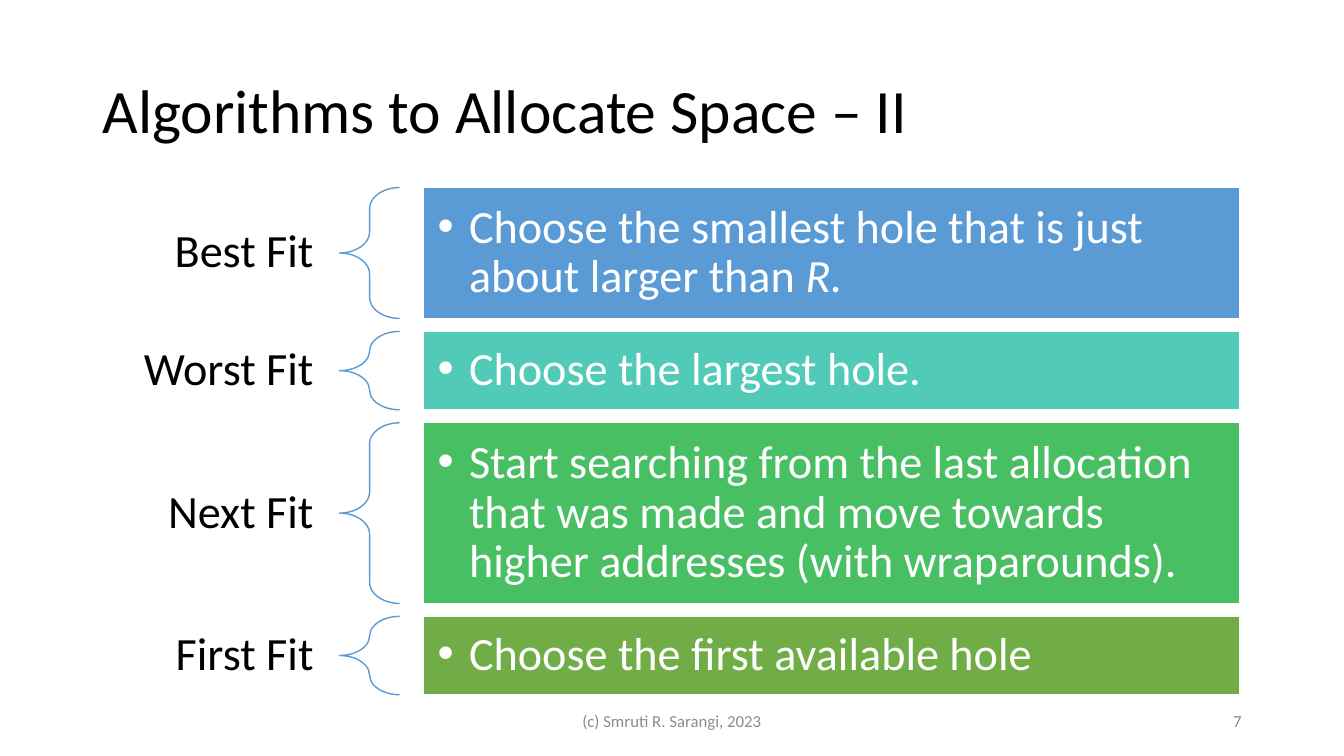
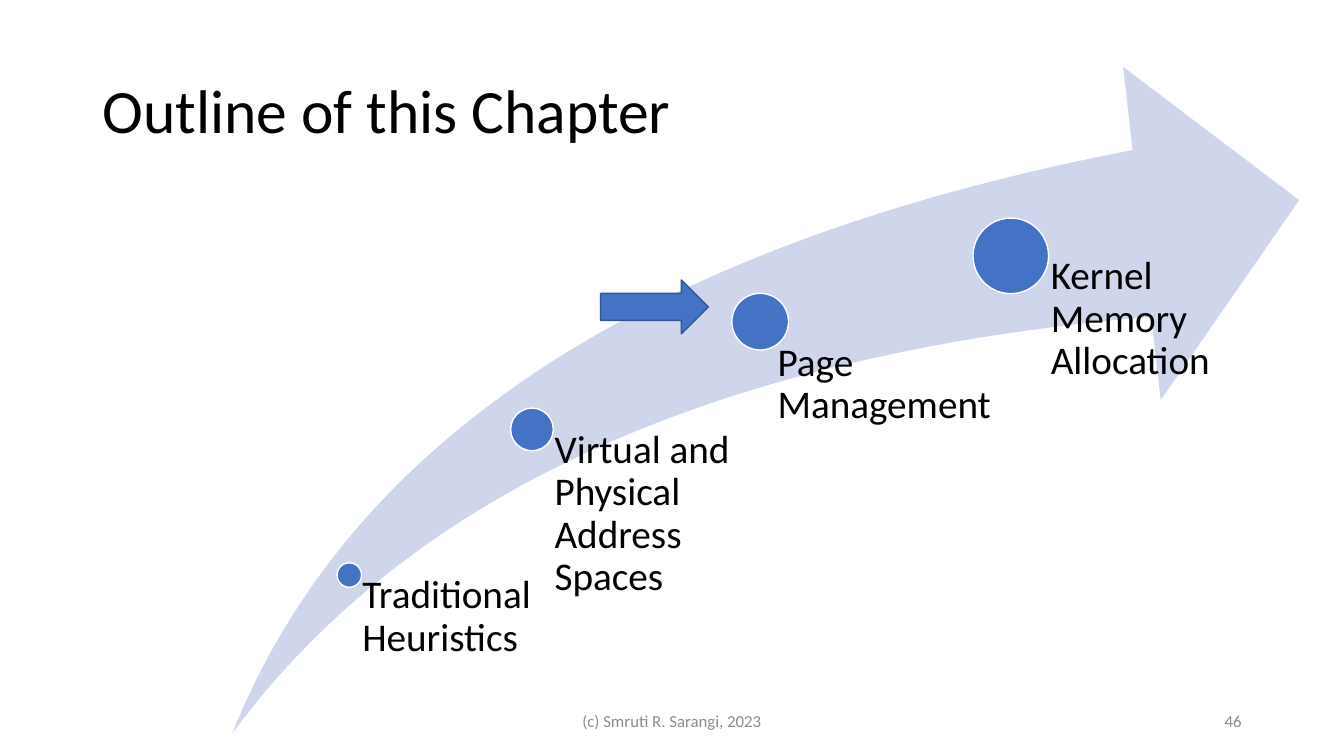
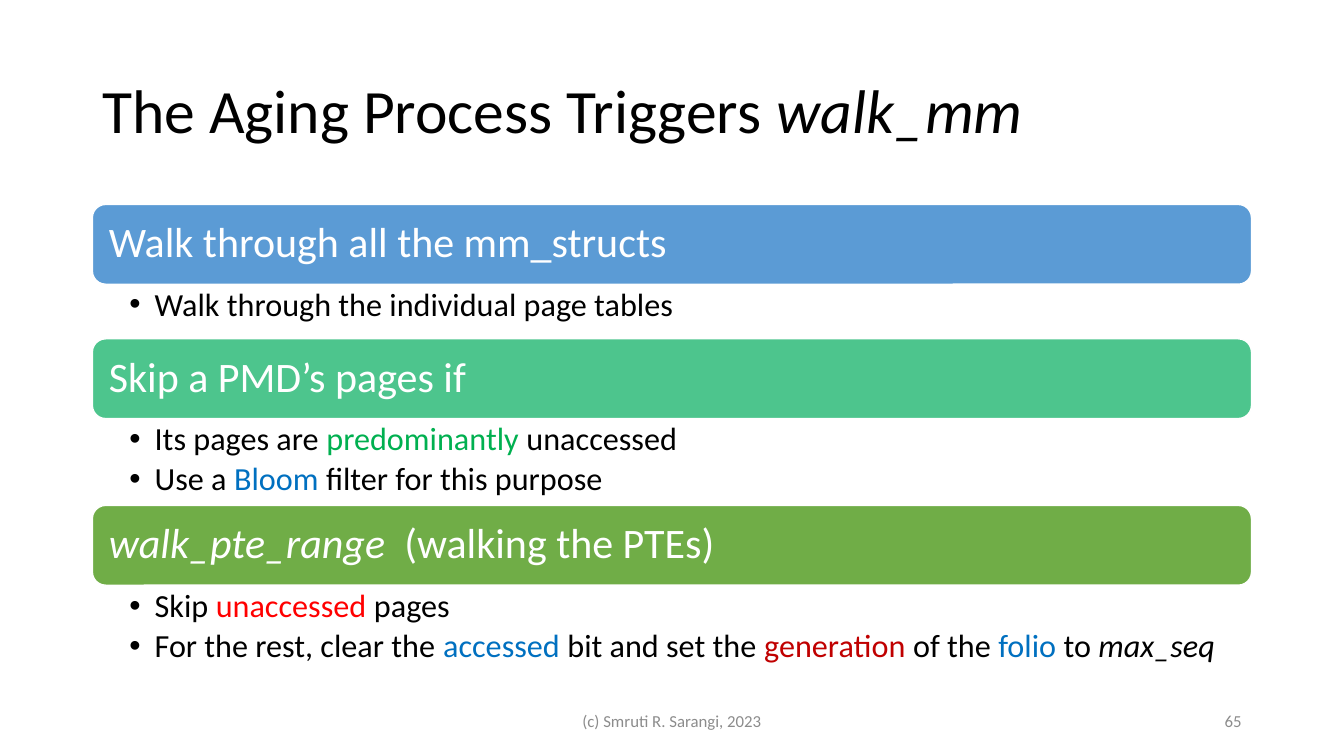
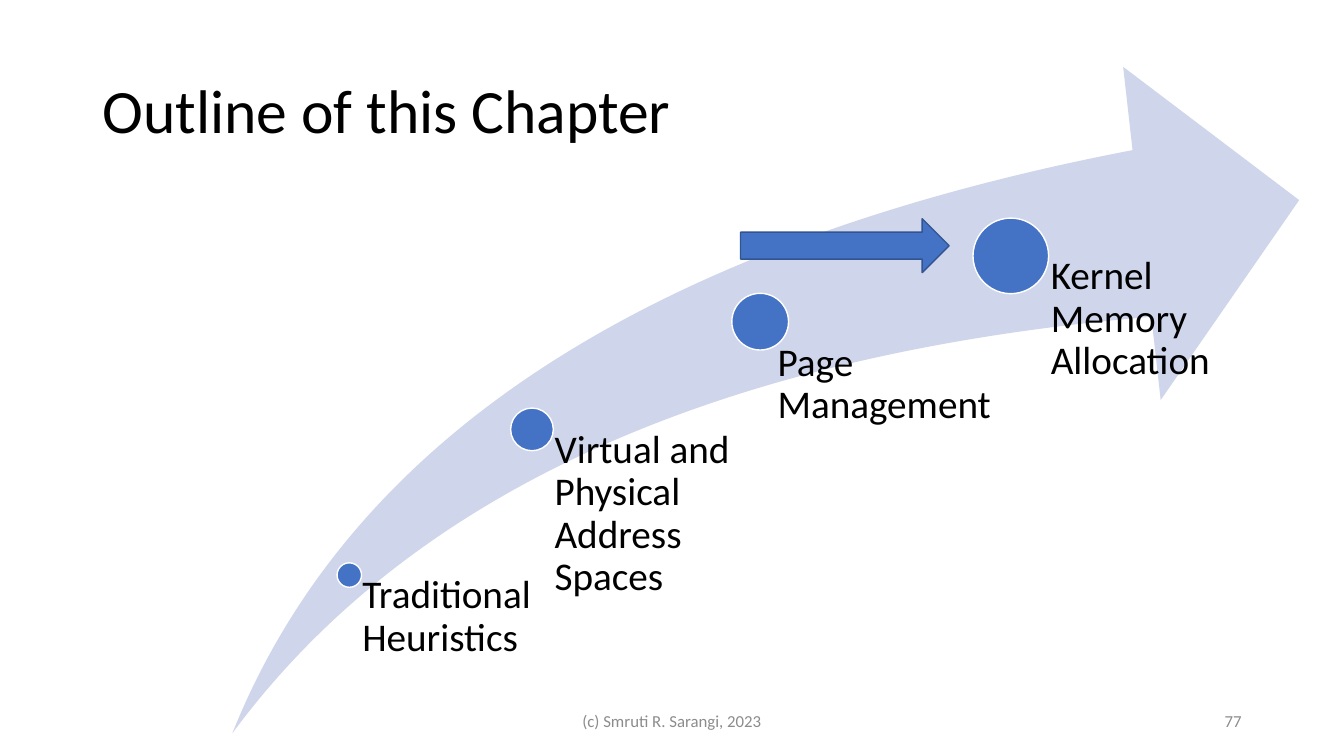
from lxml.etree import SubElement
from pptx import Presentation
from pptx.dml.color import RGBColor
from pptx.enum.shapes import MSO_SHAPE
from pptx.enum.text import MSO_ANCHOR, MSO_AUTO_SIZE, PP_ALIGN
from pptx.oxml.ns import qn
from pptx.util import Pt

FONT = "Calibri"
BLACK = RGBColor(0x00, 0x00, 0x00)
WHITE = RGBColor(0xFF, 0xFF, 0xFF)
GREY = RGBColor(0x8C, 0x8C, 0x8C)
SKY = RGBColor(0x5B, 0x9B, 0xD5)
TEAL = RGBColor(0x52, 0xCA, 0xB8)
MINT = RGBColor(0x4D, 0xC5, 0x8D)
GREEN = RGBColor(0x49, 0xBF, 0x64)
OLIVE = RGBColor(0x70, 0xAD, 0x47)
PALE = RGBColor(0xCF, 0xD5, 0xEA)
BLUE = RGBColor(0x44, 0x72, 0xC4)
NAVY = RGBColor(0x32, 0x54, 0x91)
LEAF = RGBColor(0x00, 0xB0, 0x50)
AZURE = RGBColor(0x00, 0x70, 0xC0)
RED = RGBColor(0xFF, 0x00, 0x00)
WINE = RGBColor(0xC0, 0x00, 0x00)
ITALIC = "italic"

FITS = [
    ("Best Fit", ["Choose the smallest hole that is just about larger than ",
                  ("R.", ITALIC)], SKY, 93.5),
    ("Worst Fit", "Choose the largest hole.", TEAL, 56),
    ("Next Fit", "Start searching from the last allocation that was made and "
                 "move towards higher addresses (with wraparounds).", GREEN, 129),
    ("First Fit", "Choose the first available hole", OLIVE, 56),
]

STOPS = [
    ("Traditional Heuristics", 83.5, 363, 17.5, 134, (0, 0)),
    ("Virtual and Physical Address Spaces", 214, 259, 30.5, 160, (0, 0)),
    ("Page \vManagement", 377, 182, 40.5, 270, (-9, 15)),
    ("Kernel Memory Allocation", 556, 135, 54, 160, (0, 0)),
]

STEPS = [
    ("Walk through all the mm_structs", SKY, 39,
     ["Walk through the individual page tables"]),
    ("Skip a PMD’s pages if", MINT, 62,
     [["Its pages are ", ("predominantly ", LEAF), "unaccessed"],
      ["Use a ", ("Bloom", AZURE), " filter for this purpose"]]),
    ([("walk_pte_range  ", ITALIC), "(walking the PTEs)"], OLIVE, 62,
     [["Skip ", ("unaccessed", RED), " pages"],
      ["For the rest, clear the ", ("accessed", AZURE), " bit and set the ",
       ("generation", WINE), " of the ", ("folio", AZURE), " to ",
       ("max_seq", ITALIC)]]),
]


def write(shape, lines, size, color, inset=(7.2, 3.6, 7.2, 3.6),
          align=PP_ALIGN.LEFT, anchor=MSO_ANCHOR.MIDDLE, hang=0, pitch=0.9, after=0):
    """Fill a shape with paragraphs, each a string or a list of styled parts."""
    frame = shape.text_frame
    frame.word_wrap = True
    frame.auto_size = MSO_AUTO_SIZE.NONE
    frame.vertical_anchor = anchor
    (frame.margin_left, frame.margin_top,
     frame.margin_right, frame.margin_bottom) = map(Pt, inset)
    for n, line in enumerate(lines):
        para = frame.add_paragraph() if n else frame.paragraphs[0]
        para.alignment, para.line_spacing = align, pitch
        para.space_before, para.space_after = Pt(0), Pt(after)
        if hang:
            add_dot(para, hang)
        font = para.font
        font.name, font.size, font.color.rgb = FONT, Pt(size), color
        if isinstance(line, str):
            para.text = line
            continue
        for part in line:
            text, style = (part, None) if isinstance(part, str) else part
            run = para.add_run()
            run.text = text
            if style == ITALIC:
                run.font.italic = True
            elif style is not None:
                run.font.color.rgb = style


def add_dot(para, hang):
    """Give a paragraph a round bullet and a hanging indent."""
    props = para._p.get_or_add_pPr()
    props.set("marL", str(Pt(hang)))
    props.set("indent", str(-Pt(hang)))
    SubElement(props, qn("a:buFont")).set("typeface", "Arial")
    SubElement(props, qn("a:buChar")).set("char", "•")


def add_box(slide, box):
    """Add an empty text box."""
    return slide.shapes.add_textbox(*map(Pt, box))


def add_form(slide, kind, box, fill=None, line=None):
    """Add a flat preset shape."""
    shape = slide.shapes.add_shape(kind, *map(Pt, box))
    shape.shadow.inherit = False
    if fill is None:
        shape.fill.background()
    else:
        shape.fill.solid()
        shape.fill.fore_color.rgb = fill
    if line is None:
        shape.line.fill.background()
    else:
        shape.line.color.rgb = line
        shape.line.width = Pt(1)
    return shape


def add_page(deck, title, number):
    """Start a slide with its title, footer and page number."""
    slide = deck.slides.add_slide(deck.slide_layouts[5])
    head = slide.shapes.title
    head.left, head.top, head.width, head.height = map(Pt, (66, 29, 828, 104))
    write(head, [title], 44, BLACK)
    write(add_box(slide, (318, 500.5, 324, 29)), ["(c) Smruti R. Sarangi, 2023"],
          12, GREY, align=PP_ALIGN.CENTER, pitch=1)
    write(add_box(slide, (678, 500.5, 216, 29)), [str(number)],
          12, GREY, align=PP_ALIGN.RIGHT, pitch=1)
    return slide


def draw_fits(slide, left, top, width):
    """Draw rows of label, brace and coloured bar."""
    label, brace, start, gap = 214.5, 43, 274.5, 9.25
    for name, text, color, high in FITS:
        write(add_box(slide, (left, top, label, high)), [name], 33, BLACK,
              (18.5, 0, 18.5, 0), PP_ALIGN.RIGHT)
        curve = add_form(slide, MSO_SHAPE.LEFT_BRACE,
                         (left + label, top, brace, high), line=SKY)
        curve.adjustments[0], curve.adjustments[1] = 0.35, 0.5
        bar = add_form(slide, MSO_SHAPE.RECTANGLE,
                       (left + start, top, width - start, high), color, WHITE)
        write(bar, [text], 33, WHITE, (10, 10, 10, 10), hang=22.5)
        top += high + gap


def draw_path(slide, left, top, width, height):
    """Draw the rising arrow with its stops and their labels."""
    swoosh = add_form(slide, MSO_SHAPE.SWOOSH_ARROW, (left, top, width, height), PALE)
    swoosh.adjustments[0], swoosh.adjustments[1] = 0.25, 0.25
    for name, across, down, size, span, (right, drop) in STOPS:
        x, y = left + across, top + down
        add_form(slide, MSO_SHAPE.OVAL, (x - size / 2, y - size / 2, size, size),
                 BLUE, WHITE)
        label = add_box(slide, (x + right, y + drop, span, height - down - drop))
        write(label, [name], 28, BLACK, (0.53 * size, 0, 0, 0),
              anchor=MSO_ANCHOR.TOP)


def draw_steps(slide, left, top, width):
    """Draw rounded bars, each followed by its bullets."""
    high = 57
    for head, color, depth, points in STEPS:
        bar = add_form(slide, MSO_SHAPE.ROUNDED_RECTANGLE,
                       (left, top, width, high), color, WHITE)
        write(bar, [head], 30, WHITE, (9, 9, 9, 9))
        write(add_box(slide, (left, top + high, width, depth)), points, 23, BLACK,
              (26.5, 3, 16.5, 3), anchor=MSO_ANCHOR.TOP, hang=18, after=4)
        top += high + depth


def add_plan(deck, number, arrow):
    """Add the chapter outline with an arrow at the current stop."""
    slide = add_page(deck, "Outline of this Chapter", number)
    draw_path(slide, 166, 47.75, 762, 476)
    add_form(slide, MSO_SHAPE.RIGHT_ARROW, arrow, BLUE, NAVY)


def main():
    """Build and save the deck."""
    deck = Presentation()
    deck.slide_width, deck.slide_height = Pt(960), Pt(540)
    draw_fits(add_page(deck, "Algorithms to Allocate Space – II", 7), 28, 134, 857.5)
    add_plan(deck, 46, (429, 200, 77, 38.5))
    title = ["The Aging Process Triggers ", ("walk_mm", ITALIC)]
    draw_steps(add_page(deck, title, 65), 66, 146, 828)
    add_plan(deck, 77, (529, 156.25, 149, 38.5))
    deck.save("out.pptx")


if __name__ == "__main__":
    main()
